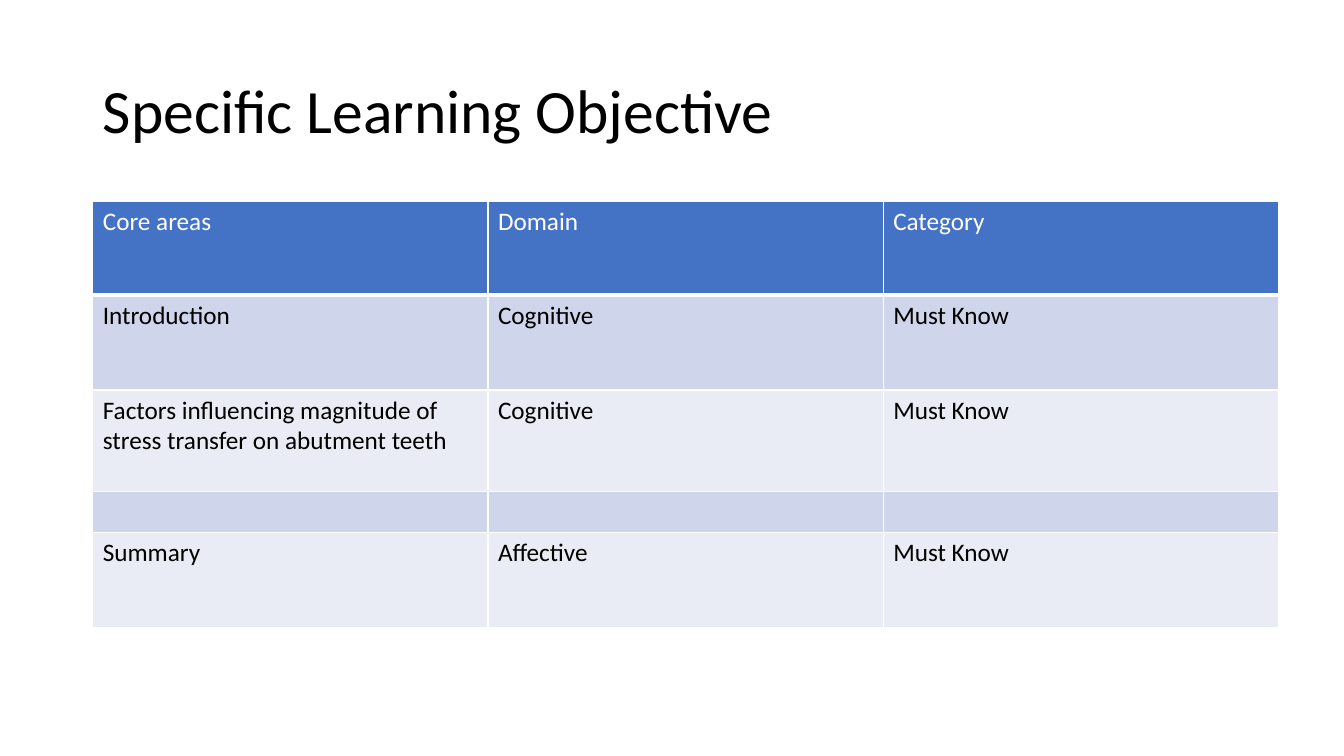
from lxml.etree import SubElement
from pptx import Presentation
from pptx.dml.color import RGBColor
from pptx.enum.text import MSO_ANCHOR as Anchor, PP_ALIGN as Align
from pptx.oxml.ns import qn
from pptx.util import Inches, Pt

TITLE = "Specific Learning Objective"
ROWS = [
    ("Core areas", "Domain", "Category"),
    ("Introduction", "Cognitive", "Must Know"),
    ("Factors influencing magnitude of stress transfer on abutment teeth",
     "Cognitive", "Must Know"),
    ("", "", ""),
    ("Summary", "Affective", "Must Know"),
]
HEIGHTS = [0.93, 0.94, 1.01, 0.4, 0.94]
LEFT, TOP, COL = 0.92, 2, 3.92
HEAD, BANDS = "4472C4", ("E9EBF5", "CFD5EA")
WHITE, BLACK = "FFFFFF", "000000"


def color(code):
    return RGBColor.from_string(code)


def style(font, size, code):
    for key, val in {"name": "Calibri", "size": Pt(size), "bold": False}.items():
        setattr(font, key, val)
    font.color.rgb = color(code)


def border(cell, low):
    """Draw white cell edges, the bottom one low points wide."""
    props = cell._tc.get_or_add_tcPr()
    for side, width in {"L": 1, "R": 1, "T": 1, "B": low}.items():
        line = SubElement(props, qn(f"a:ln{side}"), w=str(Pt(width)))
        fill = SubElement(line, qn("a:solidFill"))
        SubElement(fill, qn("a:srgbClr"), val=WHITE)


def add_title(slide):
    title = slide.shapes.title
    box = {"left": 0.92, "top": 0.4, "width": 11.5, "height": 1.45}
    for key, val in box.items():
        setattr(title, key, Inches(val))
    frame = title.text_frame
    frame.text = TITLE
    frame.word_wrap = True
    frame.vertical_anchor = Anchor.MIDDLE
    para = frame.paragraphs[0]
    para.alignment = Align.LEFT
    para.line_spacing = 0.9
    style(para.runs[0].font, 44, BLACK)


def add_grid(slide):
    cols = len(ROWS[0])
    size = LEFT, TOP, cols * COL, sum(HEIGHTS)
    table = slide.shapes.add_table(len(ROWS), cols, *map(Inches, size)).table
    for col in table.columns:
        col.width = Inches(COL)
    for r, (row, high) in enumerate(zip(ROWS, HEIGHTS)):
        table.rows[r].height = Inches(high)
        for c, text in enumerate(row):
            cell = table.cell(r, c)
            border(cell, 1 if r else 3)
            cell.fill.solid()
            cell.fill.fore_color.rgb = color(BANDS[r % 2] if r else HEAD)
            if text:
                cell.text = text
                run = cell.text_frame.paragraphs[0].runs[0]
                style(run.font, 18, BLACK if r else WHITE)


def main():
    deck = Presentation()
    deck.slide_width, deck.slide_height = Inches(13.33), Inches(7.5)
    slide = deck.slides.add_slide(deck.slide_layouts[5])
    add_title(slide)
    add_grid(slide)
    deck.save("out.pptx")


if __name__ == "__main__":
    main()
